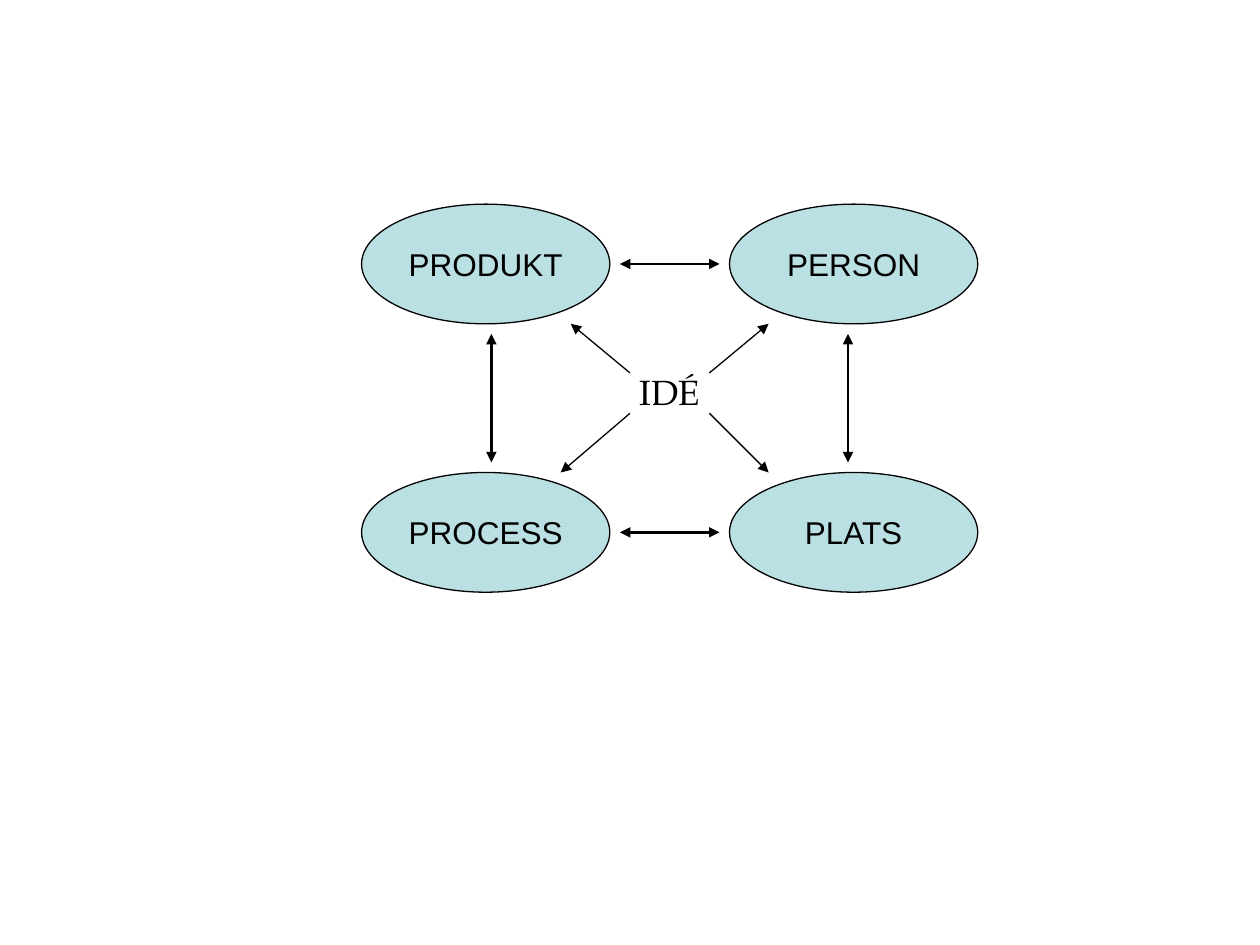
from pptx import Presentation
from pptx.dml.color import RGBColor
from pptx.enum.shapes import MSO_CONNECTOR, MSO_SHAPE
from pptx.enum.text import MSO_ANCHOR, MSO_AUTO_SIZE, PP_ALIGN
from pptx.oxml.ns import qn
from pptx.util import Inches, Pt
from lxml import etree

OVAL = MSO_SHAPE.OVAL
LINE = MSO_CONNECTOR.STRAIGHT
MIDDLE = MSO_ANCHOR.MIDDLE
CENTER = PP_ALIGN.CENTER
FIT = MSO_AUTO_SIZE.SHAPE_TO_FIT_TEXT

COLORS = {"ink": "000000", "oval": "BBE0E3"}
COLS = (2.87, 5.79)
ROWS = (1.62, 3.75)
OVAL_W, OVAL_H = 1.97, 0.95
LABELS = (("PRODUKT", "PERSON"), ("PROCESS", "PLATS"))
GAP_X = (4.92, 5.71)
GAP_Y = (2.65, 3.67)
SIDE_X = (3.9, 6.73)
RAYS = (
    ((5, 2.96), (4.53, 2.57)),
    ((5.63, 2.96), (6.1, 2.57)),
    ((5.63, 3.28), (6.1, 3.75)),
    ((5, 3.28), (4.45, 3.75)),
)


class Board:
    def __init__(self, slide):
        self.slide = slide
        self.sans = "Arial"
        self.serif = "TeX Gyre Pagella"

    def color(self, name):
        return RGBColor.from_string(COLORS[name])

    def set_text(self, shape, text, font, size):
        frame = shape.text_frame
        frame.word_wrap = False
        para = frame.paragraphs[0]
        para.text = text
        para.font.name = font
        para.font.size = Pt(size)
        para.font.color.rgb = self.color("ink")
        return frame, para

    def stroke(self, shape, width):
        shape.line.color.rgb = self.color("ink")
        shape.line.width = Pt(width)

    def oval(self, text, left, top):
        shape = self.slide.shapes.add_shape(
            OVAL, Inches(left), Inches(top), Inches(OVAL_W), Inches(OVAL_H))
        shape.shadow.inherit = False
        shape.fill.solid()
        shape.fill.fore_color.rgb = self.color("oval")
        self.stroke(shape, 0.75)
        frame, para = self.set_text(shape, text, self.sans, 18)
        frame.vertical_anchor = MIDDLE
        para.alignment = CENTER

    def label(self, text, left, top, width, height):
        box = self.slide.shapes.add_textbox(
            Inches(left), Inches(top), Inches(width), Inches(height))
        frame, _ = self.set_text(box, text, self.serif, 20)
        frame.auto_size = FIT

    def arrow(self, start, end, width=0.75, both=False):
        line = self.slide.shapes.add_connector(
            LINE, *(Inches(v) for v in (*start, *end)))
        self.stroke(line, width)
        props = line._element.spPr
        stroke = props.find(qn("a:ln"))
        for tag in ("a:headEnd", "a:tailEnd") if both else ("a:tailEnd",):
            etree.SubElement(stroke, qn(tag), type="triangle")
        etree.SubElement(props, qn("a:effectLst"))


def main():
    deck = Presentation()
    deck.slide_width, deck.slide_height = Inches(10), Inches(7.5)
    board = Board(deck.slides.add_slide(deck.slide_layouts[6]))

    for top, names in zip(ROWS, LABELS):
        for left, name in zip(COLS, names):
            board.oval(name, left, top)

    for top in ROWS:
        mid = top + OVAL_H / 2
        board.arrow((GAP_X[0], mid), (GAP_X[1], mid), 1.5, True)
    for x in SIDE_X:
        board.arrow((x, GAP_Y[0]), (x, GAP_Y[1]), 1.5, True)

    board.label("IDÉ", 4.98, 2.89, 0.68, 0.43)
    for start, end in RAYS:
        board.arrow(start, end)

    deck.save("out.pptx")


if __name__ == "__main__":
    main()
